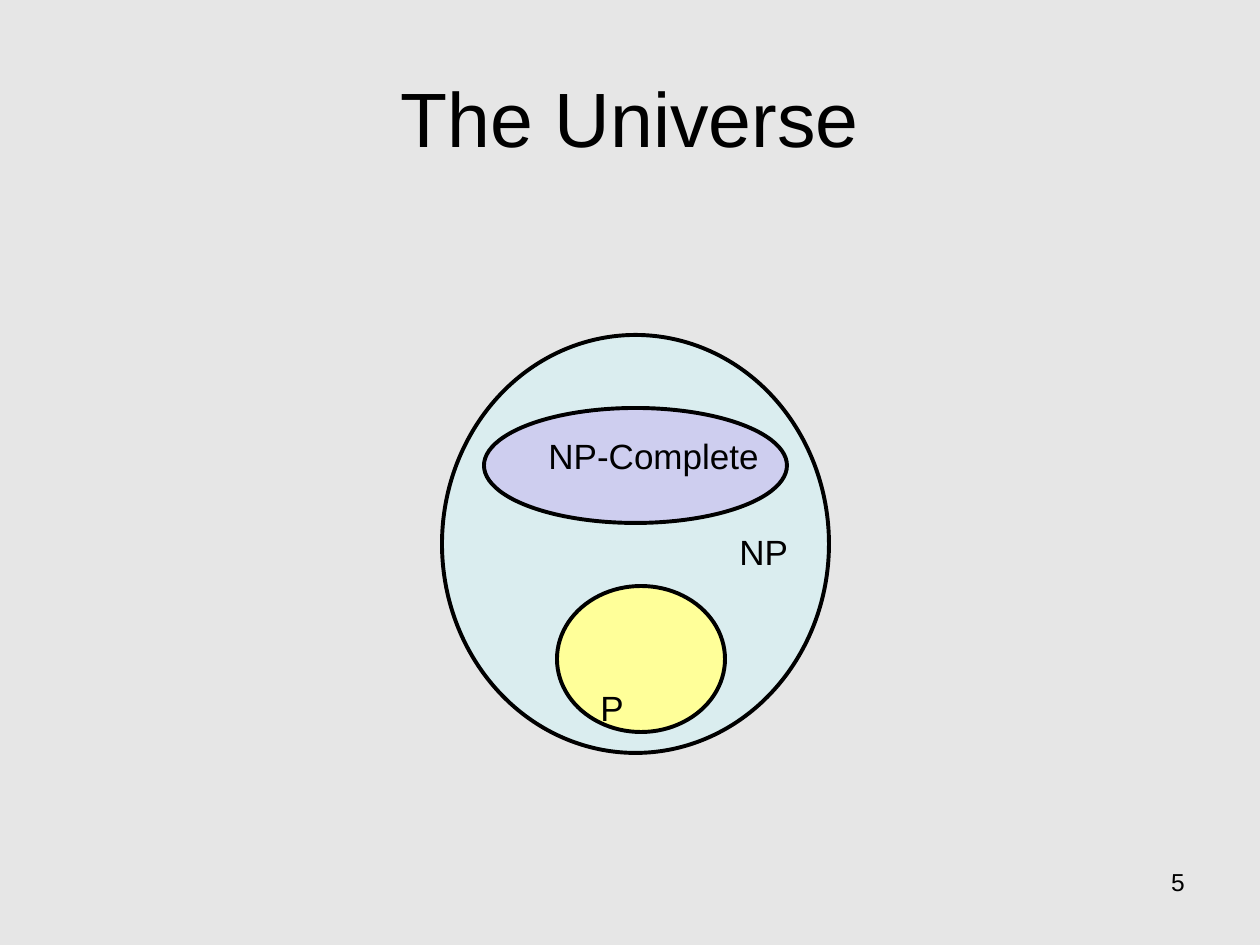
from pptx import Presentation
from pptx import util as u
from pptx.dml.color import RGBColor
from pptx.enum import shapes, text

PX_PER_INCH = 126
BACKGROUND = RGBColor(0xE6, 0xE6, 0xE6)
BLACK = RGBColor(0x00, 0x00, 0x00)
NP_BLUE = RGBColor(0xDA, 0xED, 0xEF)
P_YELLOW = RGBColor(0xFF, 0xFF, 0x99)
COMPLETE_LILAC = RGBColor(0xCE, 0xCE, 0xEF)


def px(*lengths):
    return [u.Emu(round(n * 914400 / PX_PER_INCH)) for n in lengths]


class Deck:
    font = "Arial"
    ink = BLACK
    outline = u.Pt(2.25)

    def __init__(self, width, height):
        self.prs = Presentation()
        self.prs.slide_width, self.prs.slide_height = px(width, height)
        self.s = None

    def add_slide(self, background):
        self.s = self.prs.slides.add_slide(self.prs.slide_layouts[5])
        self.s.background.fill.solid()
        self.s.background.fill.fore_color.rgb = background

    def set_text(self, sp, words, size, align):
        tf = sp.text_frame
        tf.word_wrap = True
        tf.text = words
        p = tf.paragraphs[0]
        p.alignment = align
        r = p.runs[0]
        r.font.name, r.font.size = self.font, u.Pt(size)
        r.font.color.rgb = self.ink

    def title(self, words, box):
        sp = self.s.shapes.title
        sp.left, sp.top, sp.width, sp.height = px(*box)
        self.set_text(sp, words, 44, text.PP_ALIGN.CENTER)
        sp.text_frame.vertical_anchor = text.MSO_ANCHOR.MIDDLE

    def ellipse(self, box, color):
        sp = self.s.shapes.add_shape(shapes.MSO_SHAPE.OVAL, *px(*box))
        sp.shadow.inherit = False
        sp.fill.solid()
        sp.fill.fore_color.rgb = color
        sp.line.color.rgb = self.ink
        sp.line.width = self.outline

    def label(self, words, box, size=20, align=text.PP_ALIGN.LEFT):
        sp = self.s.shapes.add_textbox(*px(*box))
        self.set_text(sp, words, size, align)


def main():
    deck = Deck(1260, 945)
    deck.add_slide(BACKGROUND)
    deck.title("The Universe", (63, 38, 1134, 157))

    # Nested complexity classes
    deck.ellipse((442, 335, 387, 418), NP_BLUE)
    deck.ellipse((557, 586, 168, 146), P_YELLOW)
    deck.ellipse((484, 408, 303, 115), COMPLETE_LILAC)

    # Class names
    deck.label("NP-Complete", (536, 428, 241, 54))
    deck.label("P", (588, 680, 105, 54))
    deck.label("NP", (727, 524, 178, 54))

    # Page number
    deck.label("5", (903, 861, 294, 66), 14, text.PP_ALIGN.RIGHT)

    deck.prs.save("out.pptx")


if __name__ == "__main__":
    main()
